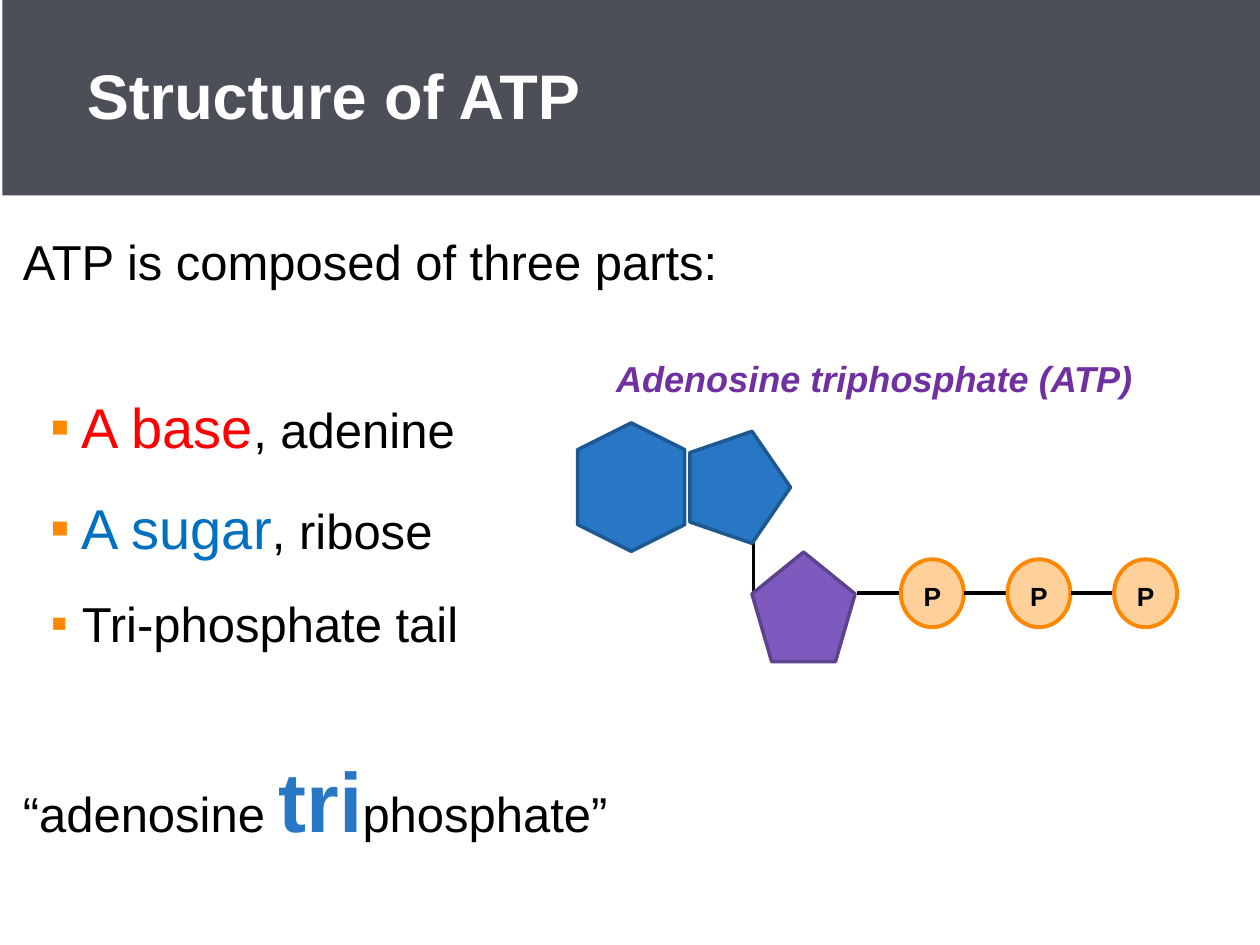
"""Build the slide on the structure of ATP."""
from lxml import etree
from pptx import Presentation
from pptx.dml.color import RGBColor
from pptx.enum.shapes import MSO_CONNECTOR, MSO_SHAPE
from pptx.enum.text import MSO_ANCHOR, MSO_AUTO_SIZE, PP_ALIGN
from pptx.oxml.ns import qn
from pptx.util import Cm, Pt

STRAIGHT = MSO_CONNECTOR.STRAIGHT
HEXAGON = MSO_SHAPE.HEXAGON
PENTAGON = MSO_SHAPE.REGULAR_PENTAGON
OVAL = MSO_SHAPE.OVAL
TOP, MIDDLE = MSO_ANCHOR.TOP, MSO_ANCHOR.MIDDLE
LEFT, CENTER = PP_ALIGN.LEFT, PP_ALIGN.CENTER
NO_AUTOFIT = MSO_AUTO_SIZE.NONE

FONT = "Arial"
COLORS = {
    "band": "4D4F58", "white": "FFFFFF", "black": "000000",
    "red": "FF0000", "sky": "0070C0", "label": "7030A0",
    "base": "2877C4", "base edge": "1E5891",
    "sugar": "7E5ABE", "sugar edge": "5D438D",
    "phosphate": "FFD099", "orange": "FE8900",
}

TITLE = ("Structure of ATP", 36, "white", True)
LABEL = ("Adenosine triphosphate (ATP)", 20.6, "label", True, True)
PHOSPHATES = ["P", "P", "P"]
BODY = [
    (False, 18.8, [("ATP is composed of three parts:", 28, "black")]),
    (True, 57, [("A base", 32, "red"), (", adenine", 28, "black")]),
    (True, 18, [("A sugar", 32, "sky"), (", ribose", 28, "black")]),
    (True, 18, [("Tri-phosphate tail", 28, "black")]),
    (False, 53, [("“adenosine ", 28, "black"), ("tri", 48, "base", True),
                 ("phosphate”", 28, "black")]),
]
BASE_RINGS = [
    (HEXAGON, (11.43, 8.74, 2.59, 2.16), 270),
    (PENTAGON, (13.79, 8.81, 2.26, 2.03), 90),
]
SUGAR_BOX = (15.16, 11.13, 2.08, 2.21)
BASE_BOND = (15.19, 10.95, 15.19, 11.96)
TAIL_LEFT, TAIL_AXIS = 18.16, 11.96
PHOSPHATE_WIDTH, PHOSPHATE_HEIGHT, BOND_LENGTH = 1.27, 1.37, 0.88


def color(name):
    return RGBColor.from_string(COLORS[name])


def lengths(values):
    return [Cm(value) for value in values]


def add_run(paragraph, text, size, color_name, bold=False, italic=False):
    run = paragraph.add_run()
    run.text = text
    font = run.font
    font.name, font.size = FONT, Pt(size)
    font.bold, font.italic = bold, italic
    font.color.rgb = color(color_name)


def set_frame(shape, anchor, margins):
    frame = shape.text_frame
    frame.auto_size = NO_AUTOFIT
    frame.word_wrap = True
    frame.vertical_anchor = anchor
    (frame.margin_left, frame.margin_top,
     frame.margin_right, frame.margin_bottom) = lengths(margins)
    return frame


def place(shape, box):
    shape.left, shape.top, shape.width, shape.height = lengths(box)


def set_bullet(paragraph, bulleted):
    properties = paragraph._p.get_or_add_pPr()
    properties.set("marL", str(Cm(1.19 if bulleted else 0)))
    properties.set("indent", str(Cm(-0.63 if bulleted else 0)))
    if not bulleted:
        etree.SubElement(properties, qn("a:buNone"))
        return
    bullet_color = etree.SubElement(properties, qn("a:buClr"))
    etree.SubElement(bullet_color, qn("a:srgbClr"), val=COLORS["orange"])
    etree.SubElement(properties, qn("a:buFont"), typeface=FONT)
    etree.SubElement(properties, qn("a:buChar"), char="▪")


def add_bond(shapes, ends):
    bond = shapes.add_connector(STRAIGHT, *lengths(ends))
    bond.line.color.rgb = color("black")
    bond.line.width = Pt(2.25)
    etree.SubElement(bond._element.spPr, qn("a:effectLst"))


def add_part(shapes, kind, box, fill, edge, width=2, rotation=0):
    shape = shapes.add_shape(kind, *lengths(box))
    shape.shadow.inherit = False
    shape.fill.solid()
    shape.fill.fore_color.rgb = color(fill)
    shape.line.color.rgb = color(edge)
    shape.line.width = Pt(width)
    shape.rotation = rotation
    return shape


def add_title(slide):
    title = slide.shapes.title
    place(title, (0.05, 0, 25.35, 3.94))
    title.fill.solid()
    title.fill.fore_color.rgb = color("band")
    frame = set_frame(title, MIDDLE, (1.7, 0.18, 0.43, 0.18))
    paragraph = frame.paragraphs[0]
    paragraph.alignment = LEFT
    paragraph.line_spacing = 0.95
    add_run(paragraph, *TITLE)


def add_body(slide):
    body = slide.placeholders[1]
    place(body, (0, 4.39, 22.15, 12.52))
    frame = set_frame(body, TOP, (0.46, 0.25, 0, 0.25))
    for index, (bulleted, space, runs) in enumerate(BODY):
        paragraph = frame.add_paragraph() if index else frame.paragraphs[0]
        paragraph.level = int(bulleted)
        paragraph.line_spacing = 1.03
        paragraph.space_before = Pt(space)
        set_bullet(paragraph, bulleted)
        for run in runs:
            add_run(paragraph, *run)


def add_molecule(slide):
    add_bond(slide.shapes, BASE_BOND)
    base = slide.shapes.add_group_shape()
    for kind, box, rotation in BASE_RINGS:
        add_part(base.shapes, kind, box, "base", "base edge", rotation=rotation)
    add_part(slide.shapes, PENTAGON, SUGAR_BOX, "sugar", "sugar edge")

    tail = slide.shapes.add_group_shape()
    for index, letter in enumerate(PHOSPHATES):
        left = TAIL_LEFT + index * (PHOSPHATE_WIDTH + BOND_LENGTH)
        add_bond(tail.shapes, (left - BOND_LENGTH, TAIL_AXIS, left, TAIL_AXIS))
        box = (left, TAIL_AXIS - PHOSPHATE_HEIGHT / 2, PHOSPHATE_WIDTH, PHOSPHATE_HEIGHT)
        phosphate = add_part(tail.shapes, OVAL, box, "phosphate", "orange", 2.25)
        paragraph = set_frame(phosphate, MIDDLE, (0, 0, 0, 0)).paragraphs[0]
        paragraph.alignment = CENTER
        paragraph.line_spacing = 1.15
        paragraph.space_before = Pt(3)
        add_run(paragraph, letter, 15, "black", True)


def add_label(slide):
    label = slide.shapes.add_textbox(*lengths((12.17, 7.06, 11.05, 1.14)))
    frame = label.text_frame
    frame.word_wrap = False
    add_run(frame.paragraphs[0], *LABEL)


def main():
    presentation = Presentation()
    presentation.slide_width, presentation.slide_height = Cm(25.4), Cm(19.05)
    slide = presentation.slides.add_slide(presentation.slide_layouts[1])
    add_title(slide)
    add_body(slide)
    add_molecule(slide)
    add_label(slide)
    presentation.save("out.pptx")


if __name__ == "__main__":
    main()
